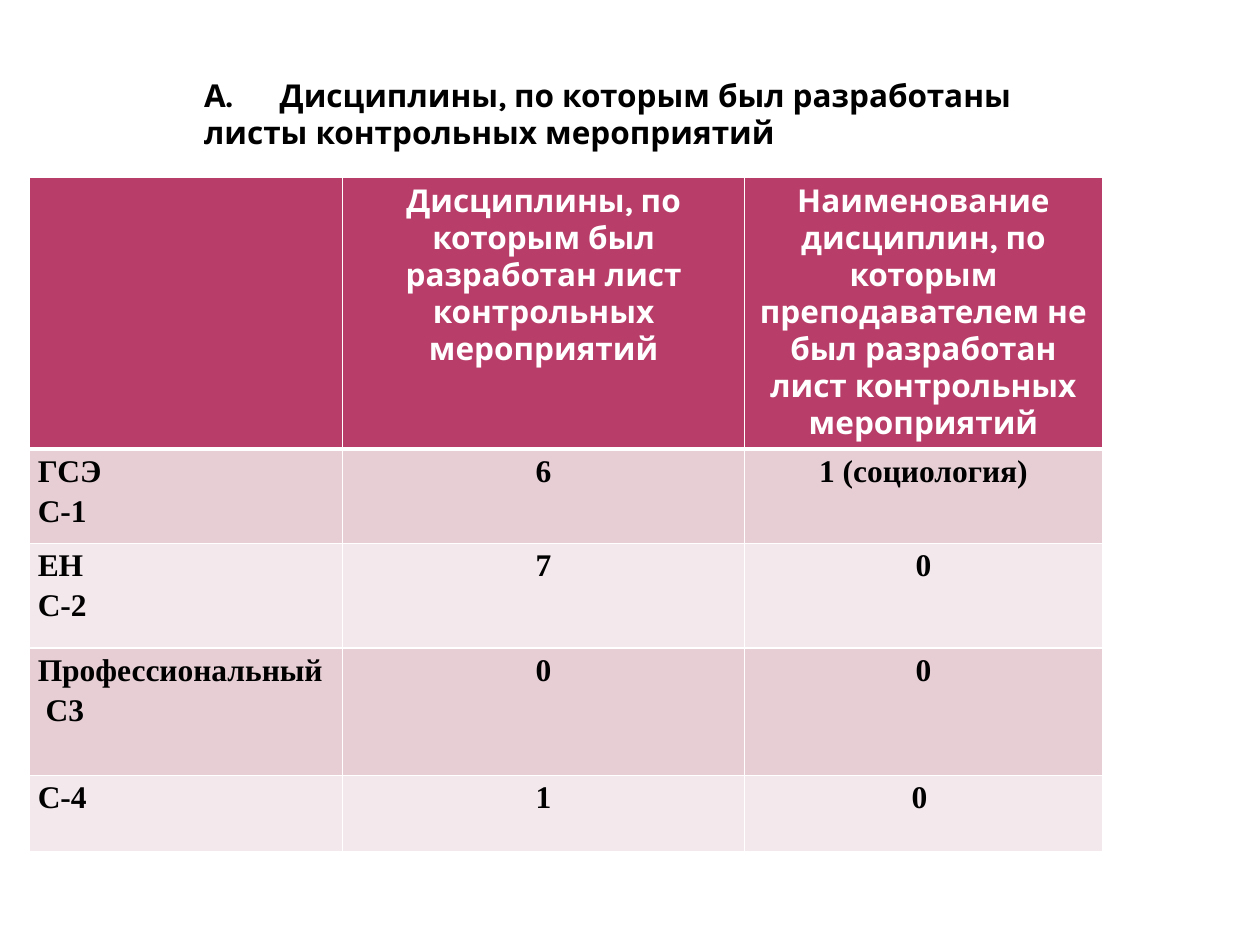
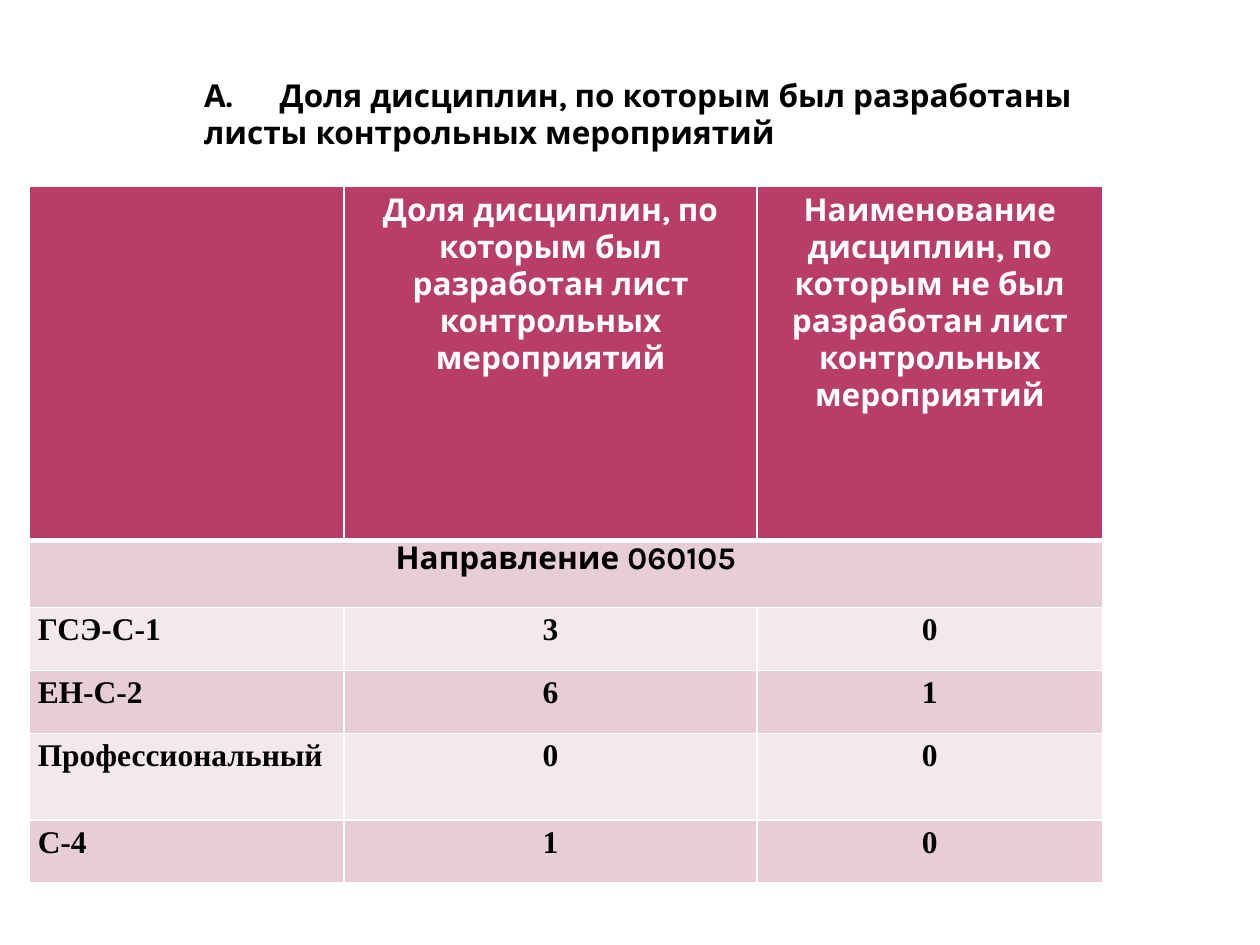
from dataclasses import dataclass
from lxml.etree import SubElement
from pptx import Presentation
from pptx.dml.color import RGBColor
from pptx.enum.text import MSO_ANCHOR, MSO_AUTO_SIZE, PP_ALIGN
from pptx.oxml.ns import qn
from pptx.util import Inches, Pt


@dataclass(frozen=True)
class Theme:
    header: RGBColor = RGBColor.from_string("B83D68")
    bands: tuple = (RGBColor.from_string("E6CED4"), RGBColor.from_string("F3E8EB"))
    ink: RGBColor = RGBColor.from_string("000000")
    white: RGBColor = RGBColor.from_string("FFFFFF")
    heading_font: str = "Karla"
    body_font: str = "Times New Roman"
    size: Pt = Pt(18)


theme = Theme()


def add_run(p, text, font, color):
    r = p.add_run()
    r.text = text
    r.font.name = font
    r.font.size = theme.size
    r.font.bold = True
    r.font.color.rgb = color


def set_borders(cell, top, bottom):
    tcPr = cell._tc.get_or_add_tcPr()
    for side, width in (("L", 1), ("R", 1), ("T", top), ("B", bottom)):
        ln = SubElement(tcPr, qn(f"a:ln{side}"), w=str(Pt(width)))
        fill = SubElement(ln, qn("a:solidFill"))
        SubElement(fill, qn("a:srgbClr"), val=str(theme.white))


slides = [
    {
        "title": "Дисциплины, по которым был разработаны листы контрольных мероприятий",
        "top": 1.41,
        "cols": [2.49, 3.19, 2.84],
        "heights": [2.11, 0.75, 0.83, 1.01, 0.61],
        "rows": [
            ["", "Дисциплины, по которым был разработан лист контрольных мероприятий",
             "Наименование дисциплин, по которым преподавателем не был разработан "
             "лист контрольных мероприятий"],
            ["ГСЭ\nС-1", "6", "1 (социология)"],
            ["ЕН\nС-2", "7", "0"],
            ["Профессиональный\n С3", "0", "0"],
            ["С-4", "1", "0 "],
        ],
    },
    {
        "title": "Доля дисциплин, по которым был разработаны листы контрольных мероприятий",
        "top": 1.48,
        "cols": [2.5, 3.28, 2.74],
        "heights": [2.81, 0.53, 0.5, 0.5, 0.69, 0.5],
        "rows": [
            ["", "Доля дисциплин, по которым был разработан лист контрольных мероприятий",
             "Наименование дисциплин, по которым не был разработан "
             "лист контрольных мероприятий"],
            ["Направление 060105"],
            ["ГСЭ-С-1", "3", "0"],
            ["ЕН-С-2", "6", "1"],
            ["Профессиональный", "0", "0"],
            ["С-4", "1", "0"],
        ],
    },
]

prs = Presentation()
prs.slide_width, prs.slide_height = Inches(10), Inches(7.5)

for content in slides:
    s = prs.slides.add_slide(prs.slide_layouts[5])

    title = s.shapes.title
    title.left, title.top = Inches(1.02), Inches(0.55)
    title.width, title.height = Inches(7.89), Inches(0.71)
    tf = title.text_frame
    tf.word_wrap = True
    tf.auto_size = MSO_AUTO_SIZE.NONE
    tf.vertical_anchor = MSO_ANCHOR.TOP
    tf.margin_left = Inches(0.6)
    p = tf.paragraphs[0]
    p.alignment = PP_ALIGN.LEFT
    tabs = SubElement(p._p.get_or_add_pPr(), qn("a:tabLst"))
    SubElement(tabs, qn("a:tab"), pos=str(Inches(0.6)), algn="l")
    add_run(p, "А.\t" + content["title"], theme.heading_font, theme.ink)

    rows, cols, heights = content["rows"], content["cols"], content["heights"]
    table = s.shapes.add_table(
        len(rows), len(cols), Inches(0.23), Inches(content["top"]),
        Inches(sum(cols)), Inches(sum(heights))).table
    for column, width in zip(table.columns, cols):
        column.width = Inches(width)

    for i, (row, height) in enumerate(zip(rows, heights)):
        table.rows[i].height = Inches(height)
        is_header, is_section = i == 0, len(row) == 1
        if is_section:
            table.cell(i, 0).merge(table.cell(i, len(cols) - 1))
        font = theme.heading_font if is_header or is_section else theme.body_font
        color = theme.white if is_header else theme.ink

        for j in range(len(cols)):
            cell = table.cell(i, j)
            set_borders(cell, 3 if i == 1 else 1, 3 if is_header else 1)
            cell.fill.solid()
            cell.fill.fore_color.rgb = theme.header if is_header else theme.bands[(i - 1) % 2]
            if not is_header:
                cell.margin_left = cell.margin_right = Inches(0.07)
                cell.margin_top = cell.margin_bottom = 0

        for j, text in enumerate(row):
            if not text:
                continue
            tf = table.cell(i, j).text_frame
            for n, line in enumerate(text.split("\n")):
                p = tf.add_paragraph() if n else tf.paragraphs[0]
                is_label = j == 0 and not is_section
                p.alignment = PP_ALIGN.JUSTIFY if is_label else PP_ALIGN.CENTER
                if font == theme.body_font:
                    p.line_spacing = 1.15
                add_run(p, line, font, color)

prs.save("out.pptx")
